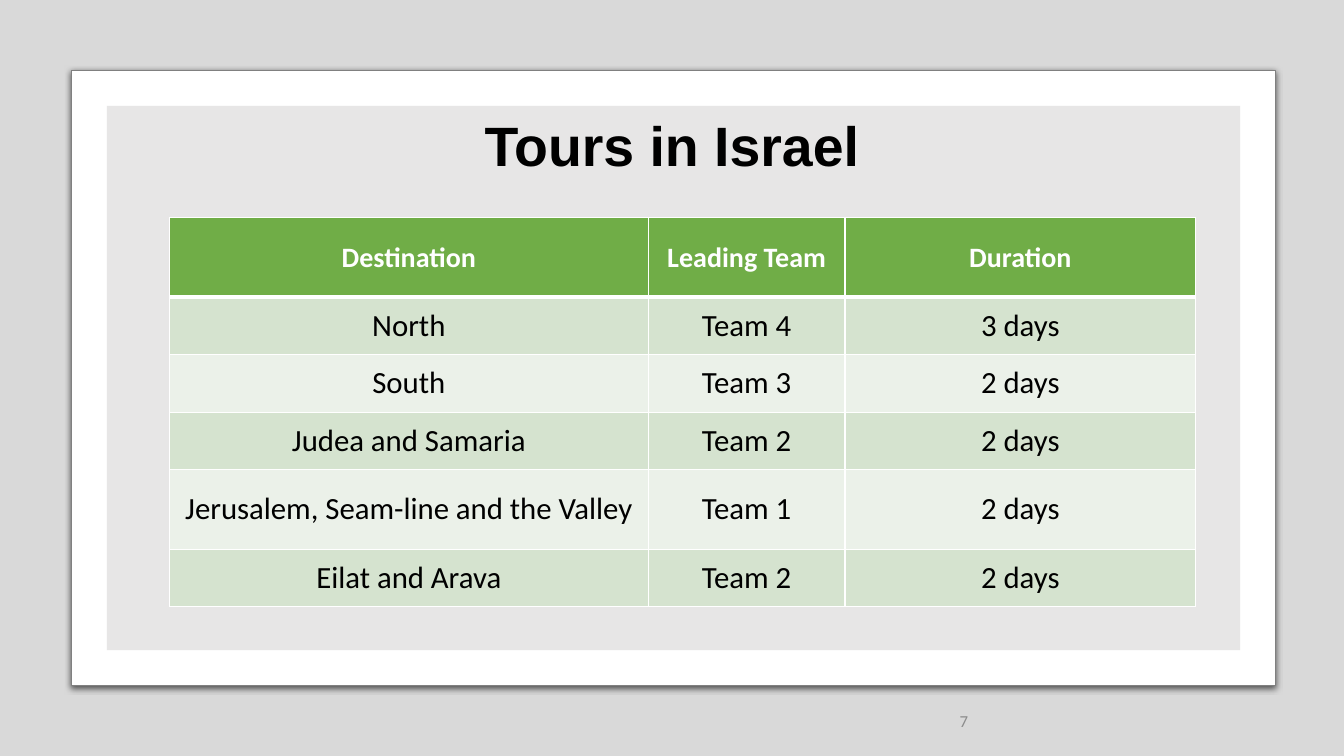
from dataclasses import dataclass

from lxml import etree
from pptx import Presentation
from pptx import util as u
from pptx.dml.color import RGBColor
from pptx.enum import shapes, text
from pptx.oxml import parse_xml
from pptx.oxml.ns import nsdecls, qn


@dataclass(frozen=True)
class Theme:
    black: str = "000000"
    white: str = "FFFFFF"
    frame_line: str = "808080"
    panel: str = "E7E6E6"
    number: str = "8C8C8C"
    header: str = "70AD47"
    bands: tuple = ("D5E3CF", "EBF1E9")
    title_font: str = "Arial"
    body_font: str = "Calibri"
    title_size: float = 39.6
    header_size: float = 20
    body_size: float = 22
    number_size: float = 12


THEME = Theme()
TOURS = [
    ("Destination", "Leading Team", "Duration"),
    ("North", "Team 4", "3 days"),
    ("South", "Team 3", "2 days"),
    ("Judea and Samaria", "Team 2", "2 days"),
    ("Jerusalem, Seam-line and the Valley", "Team 1", "2 days"),
    ("Eilat and Arava", "Team 2", "2 days"),
]
COLUMN_WIDTHS = (4.75, 1.95, 3.48)
ROW_HEIGHTS = (0.79, 0.57, 0.57, 0.57, 0.79, 0.57)


def to_inches(box):
    return [u.Inches(length) for length in box]


def write(paragraph, words, font, size, color, bold=False):
    paragraph.text = words
    paragraph.font.name = font
    paragraph.font.size = u.Pt(size)
    paragraph.font.bold = bold
    paragraph.font.color.rgb = RGBColor.from_string(color)


def add_panel(slide, box, color, kind=shapes.MSO_SHAPE.RECTANGLE):
    panel = slide.shapes.add_shape(kind, *to_inches(box))
    panel.shadow.inherit = False
    panel.fill.solid()
    panel.fill.fore_color.rgb = RGBColor.from_string(color)
    panel.line.fill.background()
    return panel


def add_backdrop(slide, box):
    backdrop = add_panel(slide, box, THEME.black)
    color = backdrop.element.spPr.find(qn("a:solidFill"))[0]
    etree.SubElement(color, qn("a:alpha"), val="15000")


def add_frame(slide, box):
    left, top, width, height = box
    frame = add_panel(slide, box, THEME.white, shapes.MSO_SHAPE.ROUNDED_RECTANGLE)
    frame.adjustments[0] = 0
    frame.line.color.rgb = RGBColor.from_string(THEME.frame_line)
    frame.line.width = u.Pt(0.75)
    frame.element.spPr.find(qn("a:effectLst")).append(parse_xml(
        f'<a:outerShdw {nsdecls("a")} blurRad="{u.Pt(4.5)}" dist="{u.Pt(1.5)}" '
        f'dir="5400000" algn="ctr" rotWithShape="0"><a:srgbClr val="{THEME.black}">'
        '<a:alpha val="63000"/></a:srgbClr></a:outerShdw>'))
    inset = 0.35
    add_panel(slide, (left + inset, top + inset, width - 2 * inset,
                      height - 2 * inset), THEME.panel)


def place_title(slide, box, words):
    title = slide.shapes.title
    title.left, title.top, title.width, title.height = to_inches(box)
    title.element.getparent().append(title.element)
    title.text_frame.vertical_anchor = text.MSO_ANCHOR.MIDDLE
    paragraph = title.text_frame.paragraphs[0]
    write(paragraph, words, THEME.title_font, THEME.title_size, THEME.black, True)
    paragraph.alignment = text.PP_ALIGN.CENTER
    paragraph.line_spacing = 0.9


def set_borders(cell, top, bottom):
    properties = cell._tc.get_or_add_tcPr()
    widths = {"lnL": 1, "lnR": 1, "lnT": top, "lnB": bottom}
    for index, (side, width) in enumerate(widths.items()):
        properties.insert(index, parse_xml(
            f'<a:{side} {nsdecls("a")} w="{u.Pt(width)}"><a:solidFill>'
            f'<a:srgbClr val="{THEME.white}"/></a:solidFill></a:{side}>'))


def add_tour_table(slide, box):
    table = slide.shapes.add_table(
        len(TOURS), len(COLUMN_WIDTHS), *to_inches(box)).table
    table.horz_banding = False
    for column, width in zip(table.columns, COLUMN_WIDTHS):
        column.width = u.Inches(width)
    for index, (row, height, entries) in enumerate(
            zip(table.rows, ROW_HEIGHTS, TOURS)):
        row.height = u.Inches(height)
        is_header = index == 0
        fill = THEME.header if is_header else THEME.bands[(index - 1) % 2]
        size = THEME.header_size if is_header else THEME.body_size
        color = THEME.white if is_header else THEME.black
        for cell, words in zip(row.cells, entries):
            cell.fill.solid()
            cell.fill.fore_color.rgb = RGBColor.from_string(fill)
            cell.vertical_anchor = text.MSO_ANCHOR.MIDDLE
            paragraph = cell.text_frame.paragraphs[0]
            write(paragraph, words, THEME.body_font, size, color, is_header)
            paragraph.alignment = text.PP_ALIGN.CENTER
            set_borders(cell, 3 if index == 1 else 1, 3 if is_header else 1)


def add_slide_number(slide, box, number):
    frame = slide.shapes.add_textbox(*to_inches(box)).text_frame
    frame.word_wrap = True
    frame.vertical_anchor = text.MSO_ANCHOR.MIDDLE
    write(frame.paragraphs[0], number, THEME.body_font, THEME.number_size,
          THEME.number)


def build_tours_slide(presentation):
    slide = presentation.slides.add_slide(presentation.slide_layouts[5])
    add_backdrop(slide, (0, 0, 13.33, 7.5))
    add_frame(slide, (0.71, 0.7, 11.94, 6.1))
    place_title(slide, (1.81, 1.12, 9.71, 0.71), "Tours in Israel")
    add_slide_number(slide, (9.42, 6.95, 3, 0.4), "7")
    add_tour_table(slide, (1.68, 2.16, sum(COLUMN_WIDTHS), sum(ROW_HEIGHTS)))


def main():
    presentation = Presentation()
    presentation.slide_width = u.Inches(13.33)
    presentation.slide_height = u.Inches(7.5)
    build_tours_slide(presentation)
    presentation.save("out.pptx")


if __name__ == "__main__":
    main()
